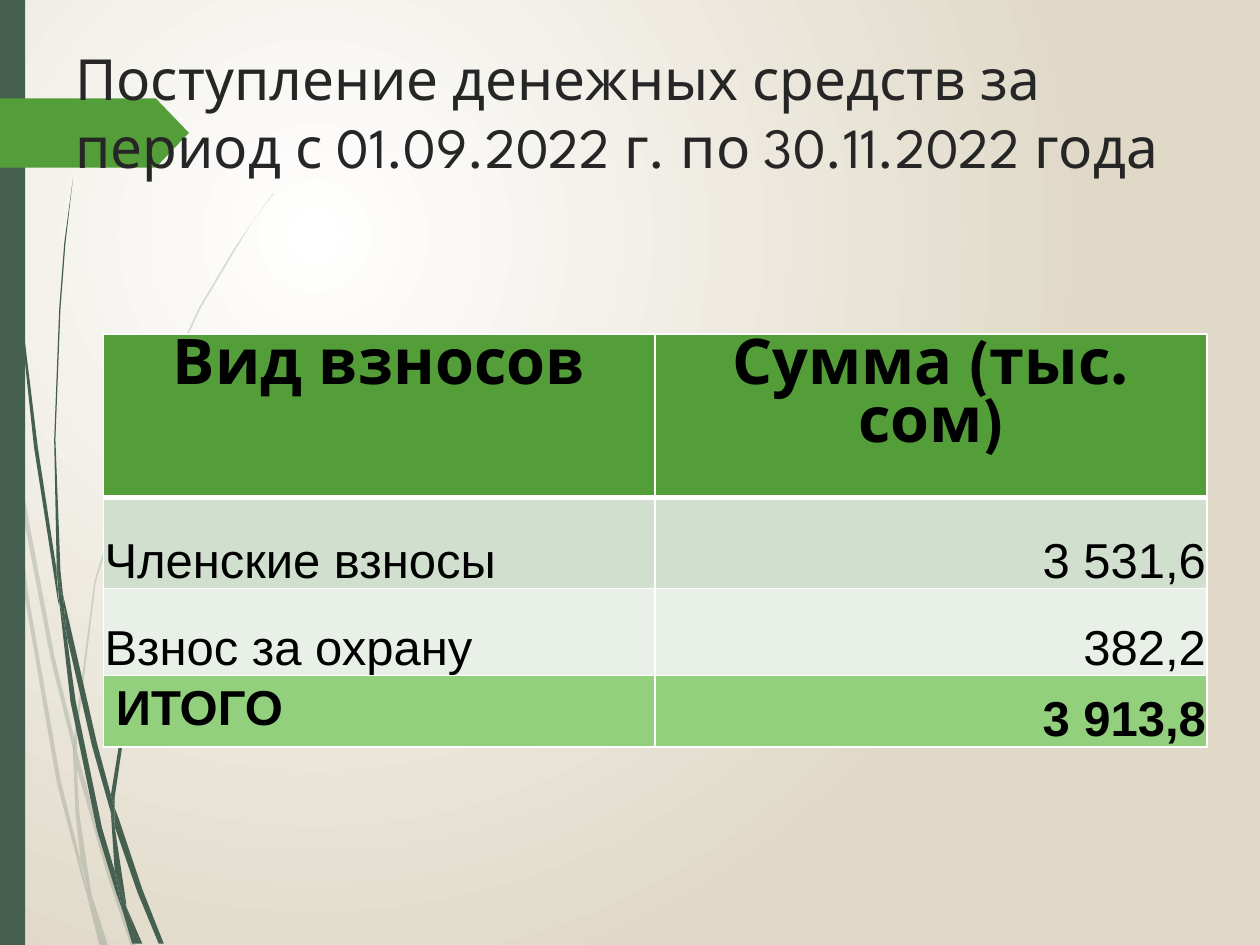
from lxml import etree
from pptx import Presentation
from pptx import util as u
from pptx.dml.color import RGBColor
from pptx.enum import shapes, text
from pptx.oxml import ns

Inches, Pt = u.Inches, u.Pt

COLORS = {
    "paper": "FFFFFF", "sand": "E0D9C8", "pine": "455F51", "green": "549E39",
    "title": "262626", "text": "000000", "border": "FFFFFF",
    "odd": "D1DFCE", "even": "E9F0E8", "total": "93D07D",
}

# Blade outlines, in hundredths of an inch
PALE_BLADES = [
    [(8, 350), (6, 322), (0, 282), (0, 299), (7, 344)],
    [(40, 522), (59, 599), (59, 586), (43, 520), (10, 345), (12, 376)],
    [(64, 607), (61, 596), (61, 610), (85, 694), (104, 751), (108, 751), (88, 692)],
    [(83, 751), (86, 751), (73, 711)],
    [(64, 683), (48, 619), (22, 469), (12, 376), (8, 350), (19, 470), (45, 621),
     (64, 693), (70, 714), (69, 707)],
    [(58, 599), (60, 646), (64, 683), (67, 692), (73, 711), (72, 706), (63, 646),
     (61, 610), (61, 608)],
    [(61, 584), (76, 462), (111, 349), (159, 245), (187, 198), (201, 175), (217, 154),
     (217, 153), (201, 175), (186, 197), (158, 244), (110, 348), (75, 461), (59, 584),
     (59, 586), (61, 596)],
    [(70, 714), (79, 751), (82, 751)],
    [(61, 608), (61, 610), (61, 596), (59, 586), (58, 599)],
    [(67, 692), (65, 683), (69, 707), (70, 714), (82, 751), (83, 751), (73, 711)],
]
DARK_BLADES = [
    [(5, 110), (14, 233), (27, 355), (46, 477), (47, 481), (45, 457), (45, 453),
     (30, 355), (15, 232), (6, 109), (4, 48), (3, 0), (2, 0), (3, 48)],
    [(73, 592), (88, 645), (88, 633), (88, 631), (77, 590), (50, 472), (53, 505)],
    [(94, 649), (91, 641), (91, 656), (109, 708), (126, 749), (130, 749), (113, 706)],
    [(91, 691), (81, 657), (60, 556), (53, 505), (47, 477), (56, 557), (77, 659),
     (92, 708), (97, 722), (96, 717)],
    [(50, 472), (48, 453), (44, 349), (48, 245), (52, 193), (58, 141), (51, 193),
     (47, 245), (43, 349), (45, 449), (49, 472)],
    [(110, 749), (113, 749), (100, 719)],
    [(47, 477), (53, 505), (50, 472), (49, 472), (45, 449), (45, 453)],
    [(91, 633), (103, 552), (131, 476), (169, 406), (191, 374), (203, 359), (216, 344),
     (215, 344), (203, 358), (191, 373), (168, 405), (129, 474), (101, 551), (88, 631),
     (91, 641)],
    [(97, 722), (105, 749), (108, 749)],
    [(88, 645), (91, 691), (96, 706), (100, 719), (100, 716), (91, 656), (90, 651)],
    [(88, 645), (90, 651), (91, 656), (91, 641), (88, 631), (88, 633)],
    [(96, 706), (91, 691), (96, 717), (97, 722), (108, 749), (110, 749), (100, 719)],
]

HEADER = ["Вид взносов", "Сумма (тыс. сом)"]
ROWS = [["Членские взносы", "3 531,6"], ["Взнос за охрану", "382,2"], ["ИТОГО", "3 913,8"]]
ROW_HEIGHTS = [1.02, 0.72, 0.69, 0.54]
ROW_FILLS = ["green", "odd", "even", "total"]


def rgb(name):
    return RGBColor.from_string(COLORS[name])


def set_attrs(obj, values):
    for name, value in values.items():
        setattr(obj, name, value)


def paint(sp, color, alpha=None):
    sp.shadow.inherit = False
    sp.line.fill.background()
    sp.fill.solid()
    sp.fill.fore_color.rgb = rgb(color)
    if alpha is not None:
        clr = sp.fill._xPr.find(".//" + ns.qn("a:srgbClr"))
        etree.SubElement(clr, ns.qn("a:alpha"), val=str(alpha * 1000))


def add_background(s):
    fill = s.background.fill
    fill.gradient()
    for stop, color in zip(fill.gradient_stops, ("paper", "sand")):
        stop.color.rgb = rgb(color)
    # Radial glow in the upper left
    lin = s.element.find(".//" + ns.qn("a:lin"))
    radial = etree.Element(ns.qn("a:path"), path="circle")
    etree.SubElement(radial, ns.qn("a:fillToRect"), l="50000", t="50000", r="100000", b="100000")
    lin.getparent().replace(lin, radial)


def add_blade(s, points, alpha=None):
    builder = s.shapes.build_freeform(*points[0], scale=Inches(0.01))
    builder.add_line_segments(points[1:], close=True)
    paint(builder.convert_to_shape(), "pine", alpha)


def add_block(s, kind, box, color):
    sp = s.shapes.add_shape(kind, *map(Inches, box))
    paint(sp, color)
    return sp


def write(tf, content, align, font, color):
    p = tf.paragraphs[0]
    p.alignment = align
    r = p.add_run()
    r.text = content
    set_attrs(r.font, font)
    r.font.color.rgb = rgb(color)


def add_title(s, content):
    tf = s.shapes.add_textbox(*map(Inches, (0.5, 0.3, 9.07, 1.56))).text_frame
    set_attrs(tf, {"word_wrap": True, "vertical_anchor": text.MSO_ANCHOR.TOP})
    write(tf, content, text.PP_ALIGN.LEFT, {"name": "League Spartan", "size": Pt(32.4)}, "title")


def set_borders(cell, widths):
    tcPr = cell._tc.get_or_add_tcPr()
    for side, width in widths.items():
        ln = etree.SubElement(tcPr, ns.qn("a:ln" + side), w=str(Pt(width)))
        fill = etree.SubElement(ln, ns.qn("a:solidFill"))
        etree.SubElement(fill, ns.qn("a:srgbClr"), val=COLORS["border"])


def add_table(s):
    rows = [HEADER] + ROWS
    last = len(rows) - 1
    box = map(Inches, (0.82, 2.65, 8.76, sum(ROW_HEIGHTS)))
    table = s.shapes.add_table(len(rows), len(HEADER), *box).table
    set_attrs(table, {"first_row": False, "horz_banding": False})
    tight = {"margin_left": Inches(0.01), "margin_right": Inches(0.01),
             "margin_top": Inches(0.01), "margin_bottom": 0,
             "vertical_anchor": text.MSO_ANCHOR.BOTTOM}
    for i, row in enumerate(rows):
        table.rows[i].height = Inches(ROW_HEIGHTS[i])
        for j, content in enumerate(row):
            cell = table.cell(i, j)
            set_borders(cell, {"L": 1, "R": 1, "T": 3 if i == 1 else 1, "B": 3 if i == 0 else 1})
            cell.fill.solid()
            cell.fill.fore_color.rgb = rgb(ROW_FILLS[i])
            if i == 0:
                align = text.PP_ALIGN.CENTER
                font = {"name": "League Spartan", "size": Pt(36), "bold": True}
            else:
                align = text.PP_ALIGN.RIGHT if j else text.PP_ALIGN.LEFT
                font = {"name": "Arial", "size": Pt(28), "bold": i == last}
                if (i, j) != (last, 0):
                    set_attrs(cell, tight)
            write(cell.text_frame, content, align, font, "text")


def main():
    prs = Presentation()
    set_attrs(prs, {"slide_width": Inches(10), "slide_height": Inches(7.5)})
    s = prs.slides.add_slide(prs.slide_layouts[6])

    # Backdrop: glow, grass blades, side bar and arrow tab
    add_background(s)
    for points in PALE_BLADES:
        add_blade(s, points, alpha=20)
    for points in DARK_BLADES:
        add_blade(s, points)
    add_block(s, shapes.MSO_SHAPE.RECTANGLE, (0, 0, 0.2, 7.5), "pine")
    tab = add_block(s, shapes.MSO_SHAPE.PENTAGON, (0, 0.78, 1.5, 0.55), "green")
    tab.adjustments[0] = 0.48

    # Content
    add_title(s, "Поступление денежных средств за период с 01.09.2022 г. по 30.11.2022 года")
    add_table(s)
    prs.save("out.pptx")


if __name__ == "__main__":
    main()
